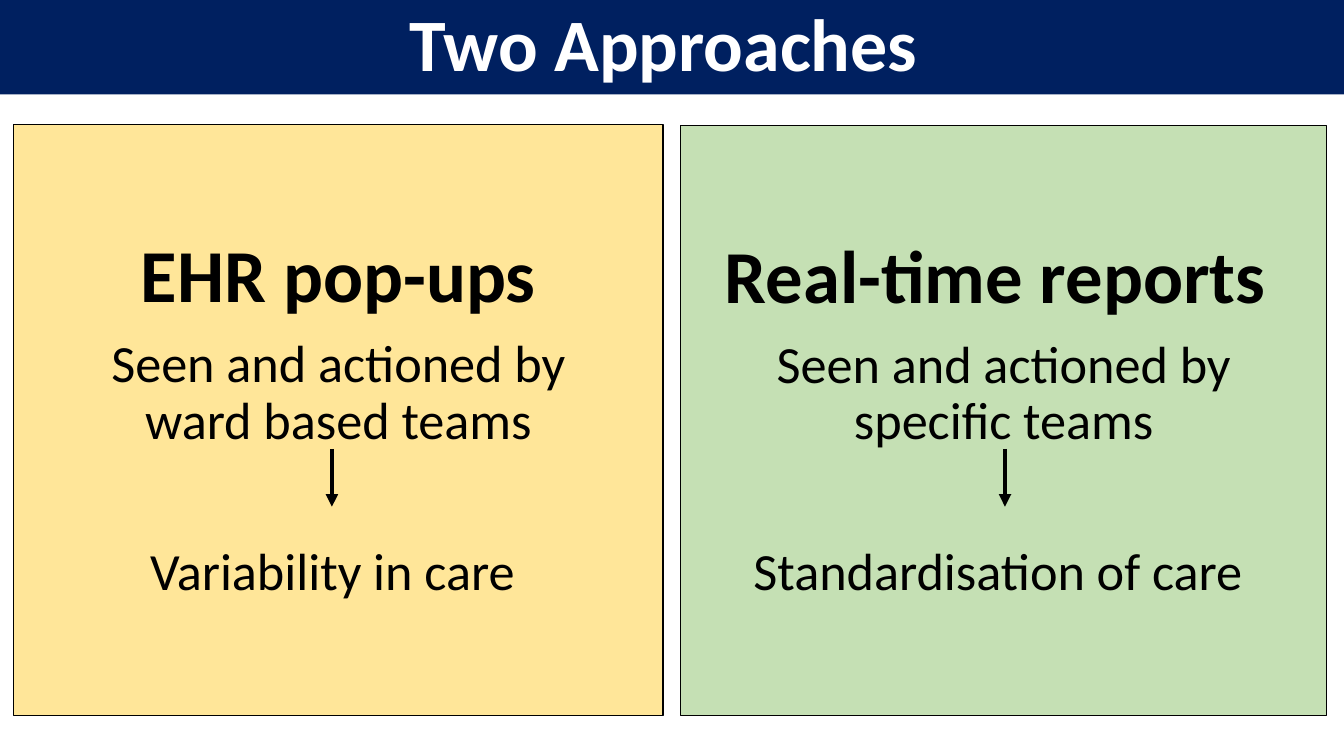
"""Build the slide that compares two approaches side by side."""
from lxml import etree
from pptx import Presentation
from pptx.dml.color import RGBColor
from pptx.enum.shapes import MSO_CONNECTOR as Connector, MSO_SHAPE as Shape
from pptx.enum.text import MSO_ANCHOR as Anchor, PP_ALIGN as Align
from pptx.oxml.ns import qn
from pptx.util import Pt

COLOURS = {"navy": "002060", "yellow": "FFE699", "green": "C5E0B4",
           "black": "000000", "white": "FFFFFF"}


def add_box(left, top, width, height, fill):
    box = slide.shapes.add_shape(Shape.RECTANGLE, Pt(left), Pt(top), Pt(width), Pt(height))
    box.shadow.inherit = False
    box.fill.solid()
    box.fill.fore_color.rgb = RGBColor.from_string(COLOURS[fill])
    box.text_frame.word_wrap = True
    box.text_frame.vertical_anchor = Anchor.MIDDLE
    return box


def write(paragraph, text, size, colour, bold=False, before=0):
    paragraph.text = text
    paragraph.alignment = Align.CENTER
    paragraph.line_spacing = 0.9
    paragraph.space_before = Pt(before)
    font = paragraph.font
    for run in paragraph.runs:
        font = run.font
        font.name = "Calibri"
        font.size = Pt(size)
        font.bold = bold
        font.color.rgb = RGBColor.from_string(COLOURS[colour])


presentation = Presentation()
presentation.slide_width = Pt(720)
presentation.slide_height = Pt(405)
slide = presentation.slides.add_slide(presentation.slide_layouts[6])

banner = add_box(0, 0, 720, 50.6, "navy")
banner.line.fill.background()
write(banner.text_frame.paragraphs[0], "Two Approaches ", 39.6, "white", bold=True)

panels = [
    (7.2, 66.8, 348, 316.5, "yellow", "EHR pop-ups",
     "Seen and actioned by\vward based teams", -37.5, "Variability in care ", 177.8),
    (364.5, 67.3, 346.3, 316, "green", "Real-time reports ",
     "Seen and actioned by specific teams", 0, "Standardisation of care ", 538.4),
]
for left, top, width, height, fill, heading, method, indent, outcome, arrow_x in panels:
    panel = add_box(left, top, width, height, fill)
    panel.line.color.rgb = RGBColor.from_string(COLOURS["black"])
    panel.line.width = Pt(0.75)
    frame = panel.text_frame
    write(frame.paragraphs[0], heading, 40, "black", bold=True, before=10)
    method_paragraph = frame.add_paragraph()
    write(method_paragraph, method, 28, "black", before=10)
    if indent:
        properties = method_paragraph._p.get_or_add_pPr()
        properties.set("marL", "0")
        properties.set("indent", str(Pt(indent)))
    write(frame.add_paragraph(), outcome, 28, "black", before=50.8)

    arrow = slide.shapes.add_connector(
        Connector.STRAIGHT, Pt(arrow_x), Pt(240.5), Pt(arrow_x), Pt(271.5))
    arrow.line.color.rgb = RGBColor.from_string(COLOURS["black"])
    arrow.line.width = Pt(2.25)
    etree.SubElement(arrow.line._get_or_add_ln(), qn("a:tailEnd"), type="triangle")
    etree.SubElement(arrow._element.spPr, qn("a:effectLst"))

presentation.save("out.pptx")
